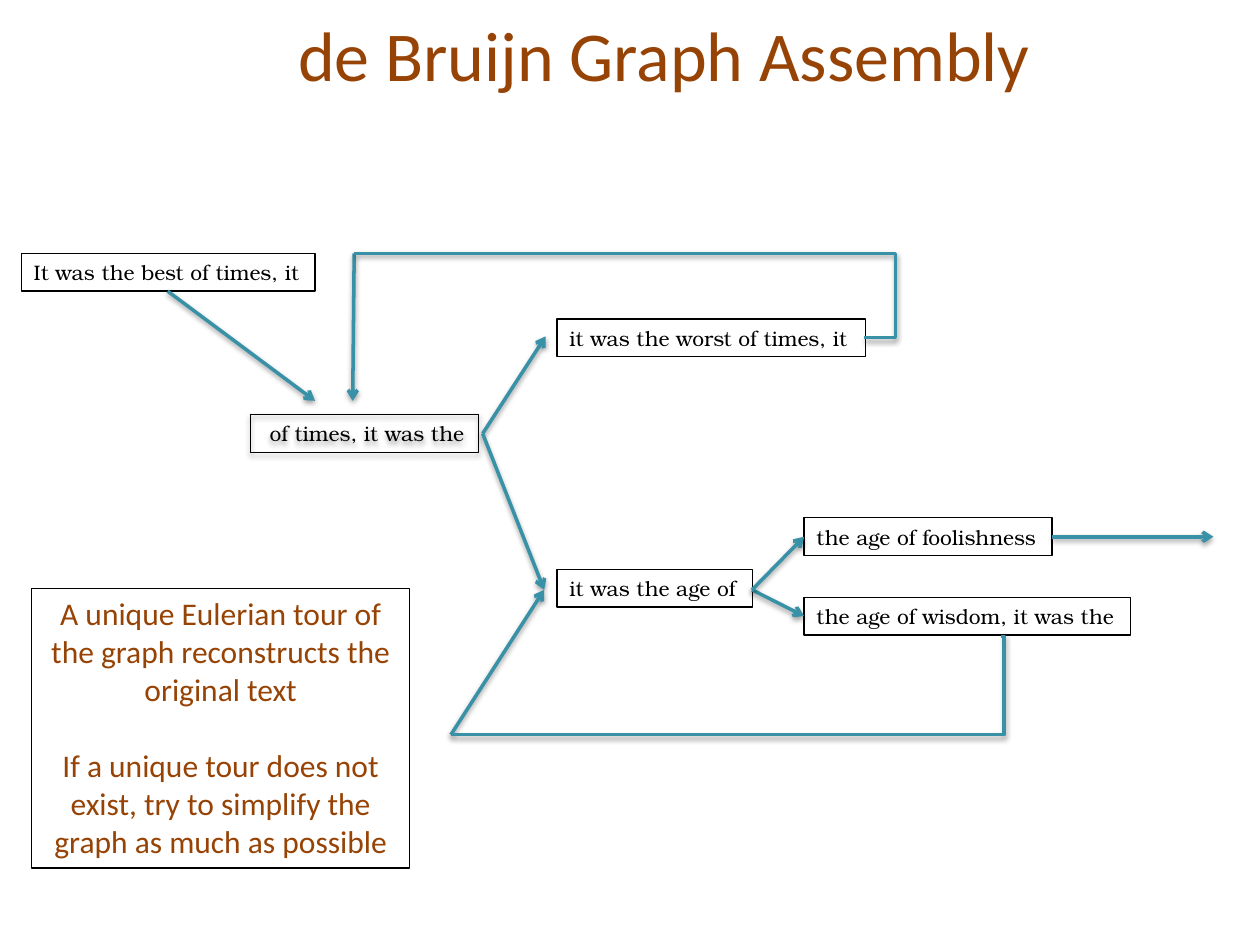
"""Build a slide that explains de Bruijn graph assembly."""
from dataclasses import dataclass
from lxml import etree
from pptx import Presentation
from pptx.dml.color import RGBColor
from pptx.enum.shapes import MSO_CONNECTOR
from pptx.enum.text import MSO_ANCHOR, PP_ALIGN
from pptx.oxml.ns import qn
from pptx.slide import Slide
from pptx.util import Cm, Pt

STRAIGHT, ELBOW = MSO_CONNECTOR.STRAIGHT, MSO_CONNECTOR.ELBOW
LEFT, CENTER, MIDDLE = PP_ALIGN.LEFT, PP_ALIGN.CENTER, MSO_ANCHOR.MIDDLE
COLORS = {"heading": "964305", "edge": "3891A7", "ink": "000000"}
HEADING_FONT, NODE_FONT = "Calibri", "TeX Gyre Bonum"
NODE_HEIGHT = 0.76

NODES = [
    ("It was the best of times, it", 0.43, 5.11, 5.92),
    (" of times, it was the", 5.05, 8.36, 4.6),
    ("it was the worst of times, it", 11.23, 6.43, 6.22),
    ("it was the age of", 11.23, 11.48, 3.94),
    ("the age of foolishness", 16.21, 10.44, 5),
    ("the age of wisdom, it was the", 16.21, 12.04, 6.58),
]
SHADOWED_NODE = " of times, it was the"
TIMES_OUT, AGE_IN, AGE_OUT = (9.73, 8.74), (10.97, 11.89), (15.16, 11.89)
FOOLISHNESS_IN, LOOP_TOP, LOOP_BOTTOM = (16.21, 10.82), (7.14, 5.11), (9.09, 14.81)
ARROWS = [
    ((3.38, 5.87), (6.35, 8.08)),
    (TIMES_OUT, (11, 6.78)),
    (TIMES_OUT, AGE_IN),
    (AGE_OUT, (16.21, 12.42)),
    (AGE_OUT, FOOLISHNESS_IN),
    (LOOP_TOP, (7.11, 8.08)),
    (LOOP_BOTTOM, AGE_IN),
    ((21.21, 10.82), (24.46, 10.82)),
]
LOOPS = [
    ((17.42, 6.81), LOOP_TOP, -6200),
    ((20.19, 12.83), LOOP_BOTTOM, -500),
]
NOTE = [
    "A unique Eulerian tour of the graph reconstructs the original text",
    "If a unique tour does not exist, try to simplify the graph as much as possible",
]


def write_text(paragraph, text, *, size, font, color, align=LEFT, space_before=0):
    paragraph.alignment = align
    paragraph.space_before = Pt(space_before)
    run = paragraph.add_run()
    run.text = text
    run.font.size = Pt(size)
    run.font.name = font
    run.font.color.rgb = RGBColor.from_string(COLORS[color])


@dataclass
class GraphSlide:
    """Hold the slide and the style of its elements."""
    slide: Slide
    edge_width: float = 2
    border_width: float = 0.75

    def title(self, text, left, top, width, height):
        shape = self.slide.shapes.title
        shape.left, shape.top, shape.width, shape.height = map(Cm, (left, top, width, height))
        shape.text_frame.vertical_anchor = MIDDLE
        write_text(shape.text_frame.paragraphs[0], text, size=40,
                   font=HEADING_FONT, color="heading", align=CENTER)

    def outline(self, line, color, width):
        line.color.rgb = RGBColor.from_string(COLORS[color])
        line.width = Pt(width)

    def cast_shadow(self, shape):
        effects = etree.SubElement(shape.element.spPr, qn("a:effectLst"))
        shadow = etree.SubElement(effects, qn("a:outerShdw"), blurRad=str(Pt(3.1)),
                                  dist=str(Pt(1.6)), dir="5400000", rotWithShape="0")
        color = etree.SubElement(shadow, qn("a:srgbClr"), val=COLORS["ink"])
        etree.SubElement(color, qn("a:alpha"), val="38000")

    def box(self, left, top, width, height):
        shape = self.slide.shapes.add_textbox(*map(Cm, (left, top, width, height)))
        shape.text_frame.word_wrap = True
        self.outline(shape.line, "ink", self.border_width)
        return shape

    def node(self, text, left, top, width):
        shape = self.box(left, top, width, NODE_HEIGHT)
        write_text(shape.text_frame.paragraphs[0], text, size=12, font=NODE_FONT, color="ink")
        if text == SHADOWED_NODE:
            self.cast_shadow(shape)

    def note(self, texts, left, top, width, height):
        frame = self.box(left, top, width, height).text_frame
        for index, text in enumerate(texts):
            paragraph = frame.add_paragraph() if index else frame.paragraphs[0]
            write_text(paragraph, text, size=18, font=HEADING_FONT, color="heading",
                       align=CENTER, space_before=22 if index else 0)

    def edge(self, kind, start, end):
        connector = self.slide.shapes.add_connector(kind, *map(Cm, (*start, *end)))
        self.outline(connector.line, "edge", self.edge_width)
        self.cast_shadow(connector)
        return connector.element.spPr

    def arrow(self, start, end):
        properties = self.edge(STRAIGHT, start, end)
        etree.SubElement(properties.find(qn("a:ln")), qn("a:tailEnd"), type="arrow")

    def loop(self, start, end, bend):
        geometry = self.edge(ELBOW, start, end).find(qn("a:prstGeom"))
        guides = geometry.find(qn("a:avLst"))
        if guides is None:
            guides = etree.SubElement(geometry, qn("a:avLst"))
        etree.SubElement(guides, qn("a:gd"), name="adj1", fmla=f"val {bend}")


def main():
    presentation = Presentation()
    presentation.slide_width, presentation.slide_height = Cm(25.4), Cm(19.05)
    graph = GraphSlide(presentation.slides.add_slide(presentation.slide_layouts[5]))
    graph.title("de Bruijn Graph Assembly", 1.96, 0.23, 22.86, 1.7)
    for node in NODES:
        graph.node(*node)
    for arrow in ARROWS:
        graph.arrow(*arrow)
    for loop in LOOPS:
        graph.loop(*loop)
    graph.note(NOTE, 0.64, 11.86, 7.62, 5.64)
    presentation.save("out.pptx")


if __name__ == "__main__":
    main()
